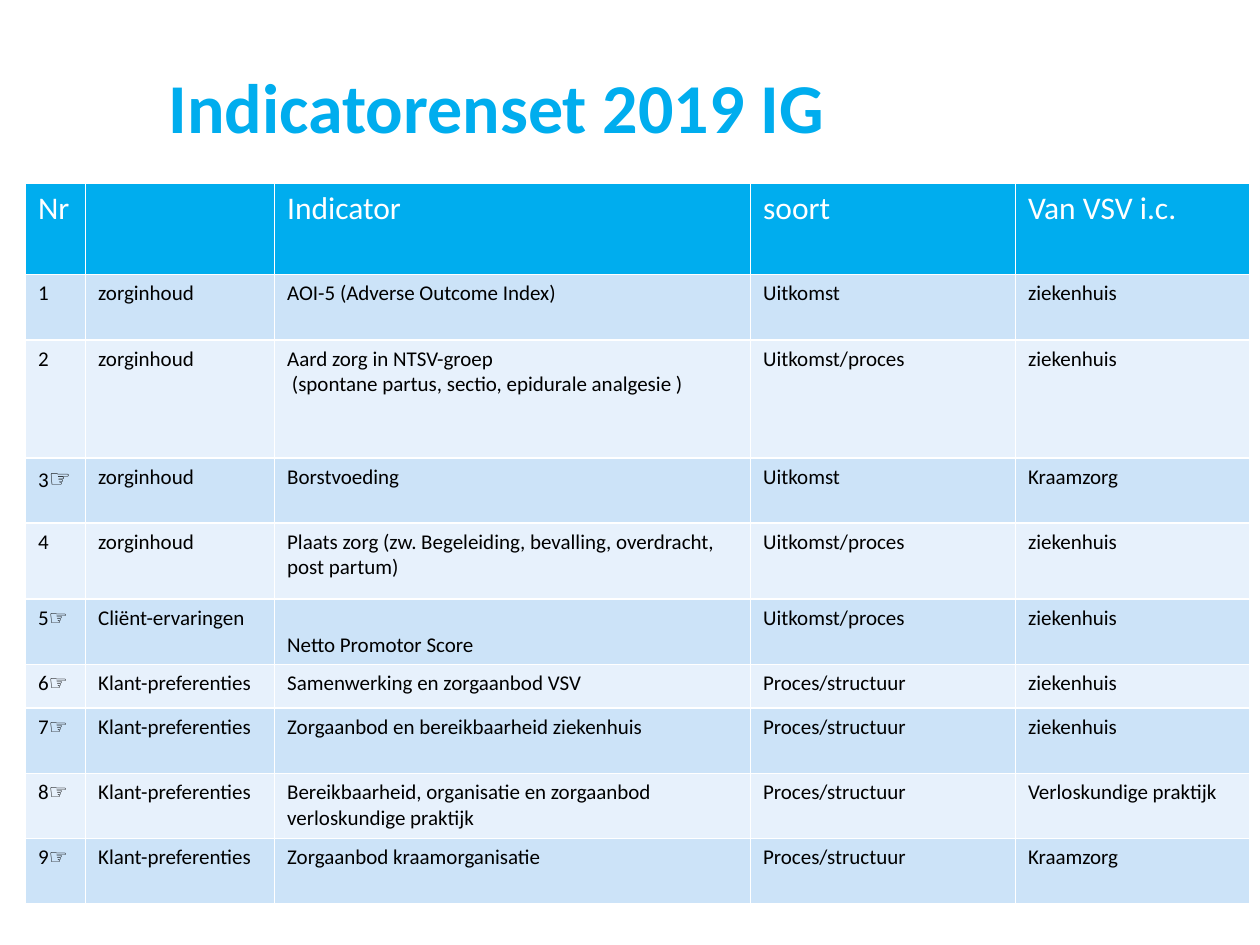
from pptx import Presentation
from pptx.dml.color import RGBColor
from pptx.enum.text import MSO_ANCHOR, MSO_AUTO_SIZE, PP_ALIGN
from pptx.util import Pt

BLUE = RGBColor(0x00, 0xAD, 0xEE)
BAND_DARK = RGBColor(0xCC, 0xE3, 0xF8)
BAND_LIGHT = RGBColor(0xE7, 0xF1, 0xFC)
WHITE = RGBColor(0xFF, 0xFF, 0xFF)
BLACK = RGBColor(0x00, 0x00, 0x00)
FONT = "Calibri"
HAND = "☞"

COL_WIDTHS = [34.3, 108, 272, 151.4, 134]
ROW_HEIGHTS = [52.3, 37.3, 67.5, 37.3, 43.5, 37.3, 25, 37.3, 37.3, 37.3]
HEADER = ["Nr", "", "Indicator", "soort", "Van VSV i.c."]
INDICATORS = [
    ["1", "zorginhoud", "AOI-5 (Adverse Outcome Index)", "Uitkomst", "ziekenhuis"],
    ["2", "zorginhoud",
     "Aard zorg in NTSV-groep\n (spontane partus, sectio, epidurale analgesie )",
     "Uitkomst/proces", "ziekenhuis"],
    ["3☞", "zorginhoud", "Borstvoeding", "Uitkomst", "Kraamzorg"],
    ["4", "zorginhoud",
     "Plaats zorg (zw. Begeleiding, bevalling, overdracht, post partum)",
     "Uitkomst/proces", "ziekenhuis"],
    ["5☞", "Cliënt-ervaringen", "Netto Promotor Score", "Uitkomst/proces", "ziekenhuis"],
    ["6☞", "Klant-preferenties", "Samenwerking en zorgaanbod VSV",
     "Proces/structuur", "ziekenhuis"],
    ["7☞", "Klant-preferenties", "Zorgaanbod en bereikbaarheid ziekenhuis",
     "Proces/structuur", "ziekenhuis"],
    ["8☞", "Klant-preferenties",
     "Bereikbaarheid, organisatie en zorgaanbod verloskundige praktijk",
     "Proces/structuur", "Verloskundige praktijk"],
    ["9☞", "Klant-preferenties", "Zorgaanbod kraamorganisatie",
     "Proces/structuur", "Kraamzorg"],
]


def add_run(p, text, size, color, bold=False):
    r = p.add_run()
    r.text = text
    r.font.name = FONT
    r.font.size = Pt(size)
    r.font.color.rgb = color
    r.font.bold = bold
    return r


def set_title(s, text):
    sp = s.shapes.title
    sp.left, sp.top, sp.width, sp.height = Pt(96.5), Pt(44.6), Pt(527), Pt(31)
    tf = sp.text_frame
    tf.margin_left = tf.margin_top = tf.margin_right = tf.margin_bottom = 0
    tf.auto_size = MSO_AUTO_SIZE.NONE
    tf.vertical_anchor = MSO_ANCHOR.MIDDLE
    p = tf.paragraphs[0]
    p.alignment = PP_ALIGN.LEFT
    add_run(p, text, 40, BLUE, bold=True)


def fill_cell(cell, text, size, color, fill):
    cell.fill.solid()
    cell.fill.fore_color.rgb = fill
    tf = cell.text_frame
    for i, line in enumerate(text.split("\n")):
        p = tf.paragraphs[0] if i == 0 else tf.add_paragraph()
        if line:
            add_run(p, line, size, color)


def add_indicator_table(s):
    rows = [HEADER] + INDICATORS
    shape = s.shapes.add_table(len(rows), len(HEADER), Pt(14.6), Pt(104.6),
                               Pt(sum(COL_WIDTHS)), Pt(sum(ROW_HEIGHTS)))
    table = shape.table
    for column, width in zip(table.columns, COL_WIDTHS):
        column.width = Pt(width)
    for i, (values, height) in enumerate(zip(rows, ROW_HEIGHTS)):
        table.rows[i].height = Pt(height)
        if i == 0:
            size, color, fill = 18, WHITE, BLUE
        else:
            size, color, fill = 12, BLACK, BAND_DARK if i % 2 else BAND_LIGHT
        for j, text in enumerate(values):
            fill_cell(table.cell(i, j), text, size, color, fill)
    return table


def main():
    prs = Presentation()
    prs.slide_width, prs.slide_height = Pt(720), Pt(540)
    s = prs.slides.add_slide(prs.slide_layouts[5])
    set_title(s, "Indicatorenset 2019 IG")
    table = add_indicator_table(s)
    table.cell(5, 2).vertical_anchor = MSO_ANCHOR.BOTTOM
    p = table.cell(3, 0).text_frame.paragraphs[0]
    p.runs[0].text = "3"
    add_run(p, HAND, 14, BLACK)
    prs.save("out.pptx")


if __name__ == "__main__":
    main()
